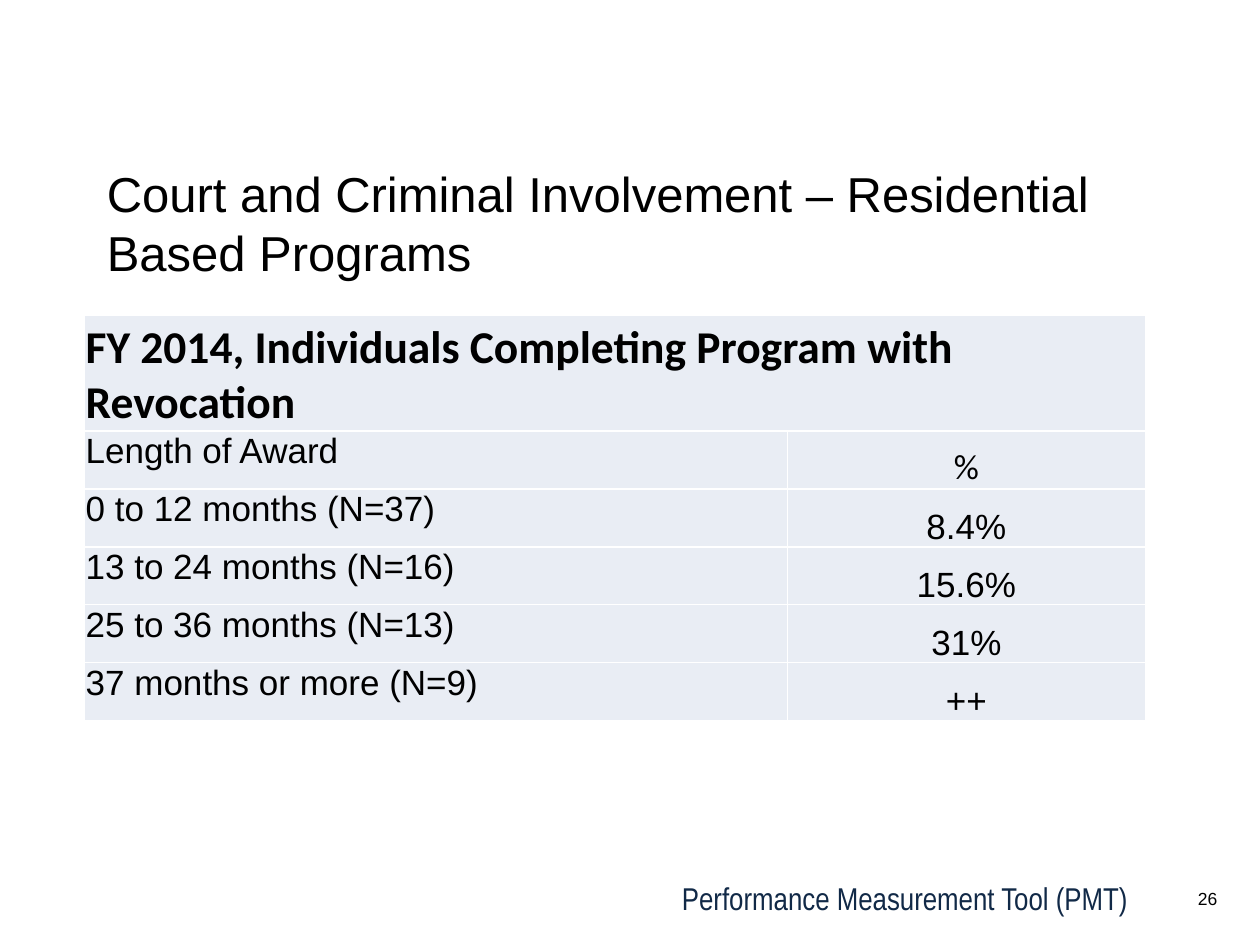
from dataclasses import dataclass

from pptx import Presentation
from pptx import util as u
from pptx.dml.color import RGBColor
from pptx.enum import text
from pptx.oxml import parse_xml
from pptx.oxml.ns import nsdecls

ALIGN = text.PP_ALIGN
ANCHOR = text.MSO_ANCHOR


@dataclass(frozen=True)
class Theme:
    black: str = "000000"
    navy: str = "112947"
    pale: str = "E9EDF4"
    white: str = "FFFFFF"
    sans: str = "Arial"
    slim: str = "Arial Narrow"
    head: str = "Calibri"
    title: int = 28
    band: int = 26
    body: int = 20
    foot: int = 18
    page: int = 10


THEME = Theme()
ROWS = [
    ("Length of Award", "%"),
    ("0 to 12 months (N=37)", "8.4%"),
    ("13 to 24 months (N=16)", "15.6%"),
    ("25 to 36 months (N=13)", "31%"),
    ("37 months or more (N=9)", "++"),
]


def write(frame, words, size, name=THEME.sans, color=THEME.black,
          bold=False, align=ALIGN.LEFT):
    para = frame.paragraphs[0]
    para.alignment = align
    run = para.add_run()
    run.text = words
    look = {"size": u.Pt(size), "name": name, "bold": bold}
    for key, value in look.items():
        setattr(run.font, key, value)
    run.font.color.rgb = RGBColor.from_string(color)
    return para


def add_text(slide, place, words, size, wrap=True, **look):
    box = slide.shapes.add_textbox(*map(u.Inches, place))
    box.text_frame.word_wrap = wrap
    return write(box.text_frame, words, size, **look)


def edge(cell):
    """Draw thin lines on all four sides; they must precede the fill."""
    props = cell._tc.get_or_add_tcPr()
    for spot, side in enumerate("LRTB"):
        props.insert(spot, parse_xml(
            f'<a:ln{side} {nsdecls("a")} w="{u.Pt(1)}"><a:solidFill>'
            f'<a:srgbClr val="{THEME.white}"/></a:solidFill></a:ln{side}>'))


def fill_cell(cell, words, size, anchor=ANCHOR.BOTTOM, **look):
    thin = u.Inches(0.01)
    form = {"margin_left": thin, "margin_right": thin, "margin_top": thin,
            "margin_bottom": 0, "vertical_anchor": anchor}
    for key, value in form.items():
        setattr(cell, key, value)
    write(cell.text_frame, words, size, **look)


def add_grid(slide):
    place = map(u.Inches, (0.67, 2.5, 8.42, 3.24))
    table = slide.shapes.add_table(len(ROWS) + 1, 2, *place).table
    table.first_row = table.horz_banding = False
    for col, width in zip(table.columns, (5.58, 2.84)):
        col.width = u.Inches(width)
    for num, row in enumerate(table.rows):
        row.height = u.Inches(0.46 if num else 0.92)
    for cell in table.iter_cells():
        cell.fill.solid()
        cell.fill.fore_color.rgb = RGBColor.from_string(THEME.pale)
        edge(cell)

    band = table.cell(0, 0)
    band.merge(table.cell(0, 1))
    fill_cell(band, "FY 2014, Individuals Completing Program with Revocation",
              THEME.band, name=THEME.head, bold=True)
    for num, (term, share) in enumerate(ROWS, 1):
        fill_cell(table.cell(num, 0), term, THEME.body, ANCHOR.TOP)
        fill_cell(table.cell(num, 1), share, THEME.body, align=ALIGN.CENTER,
                  name=THEME.head if num == 1 else THEME.sans)


def main():
    deck = Presentation()
    deck.slide_width, deck.slide_height = u.Inches(10), u.Inches(7.5)
    slide = deck.slides.add_slide(deck.slide_layouts[6])
    add_text(slide, (4.17, 6.93, 4.88, 0.4),
             "Performance Measurement Tool (PMT)", THEME.foot,
             name=THEME.slim, color=THEME.navy, align=ALIGN.RIGHT)
    title = add_text(slide, (0.75, 1.25, 8.33, 1.54),
                     "Court and Criminal Involvement – Residential "
                     "Based Programs", THEME.title)
    title.space_after = u.Pt(4)
    add_text(slide, (9.39, 7, 0.37, 0.27), "26", THEME.page, wrap=False,
             align=ALIGN.RIGHT)
    add_grid(slide)
    deck.save("out.pptx")


if __name__ == "__main__":
    main()
